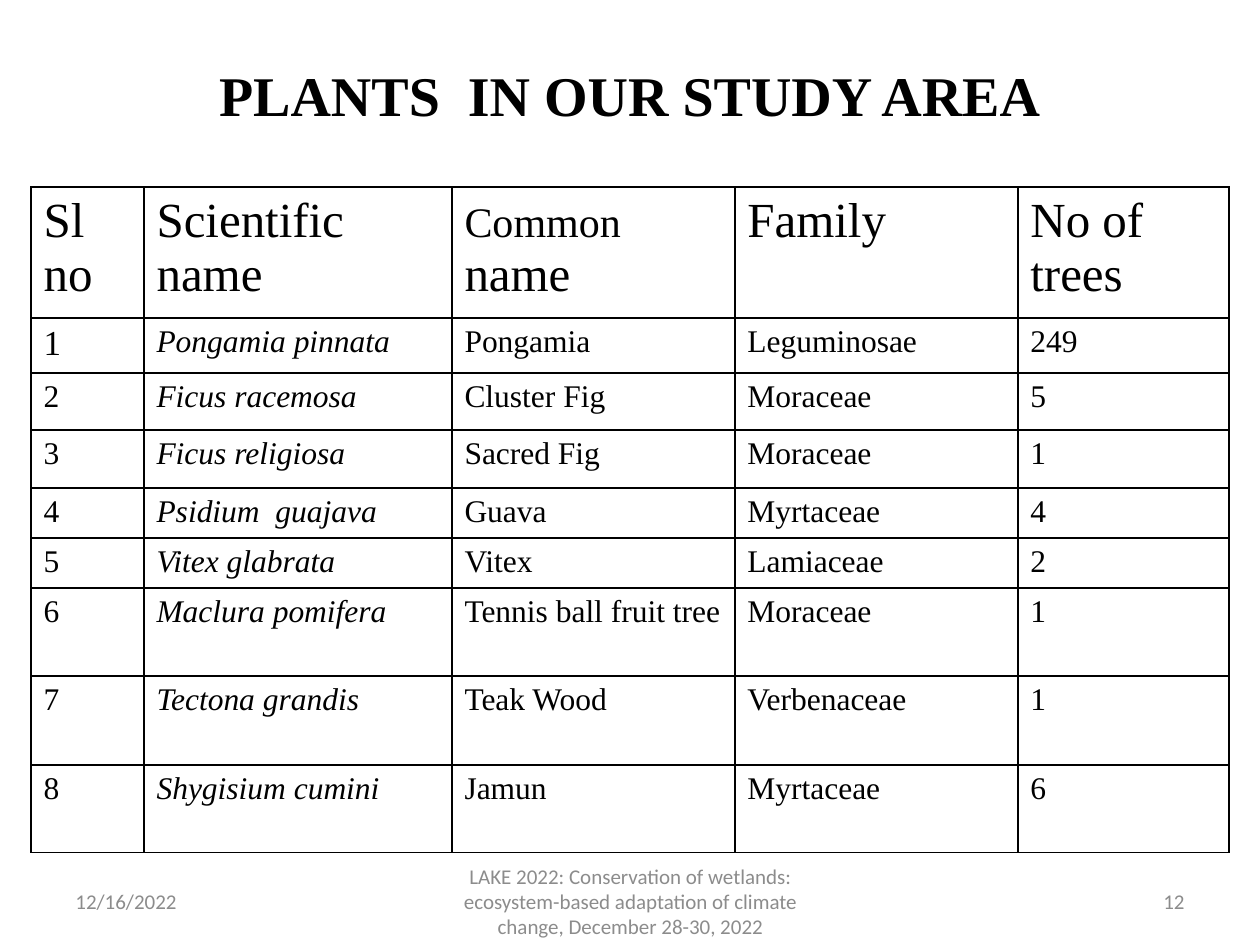
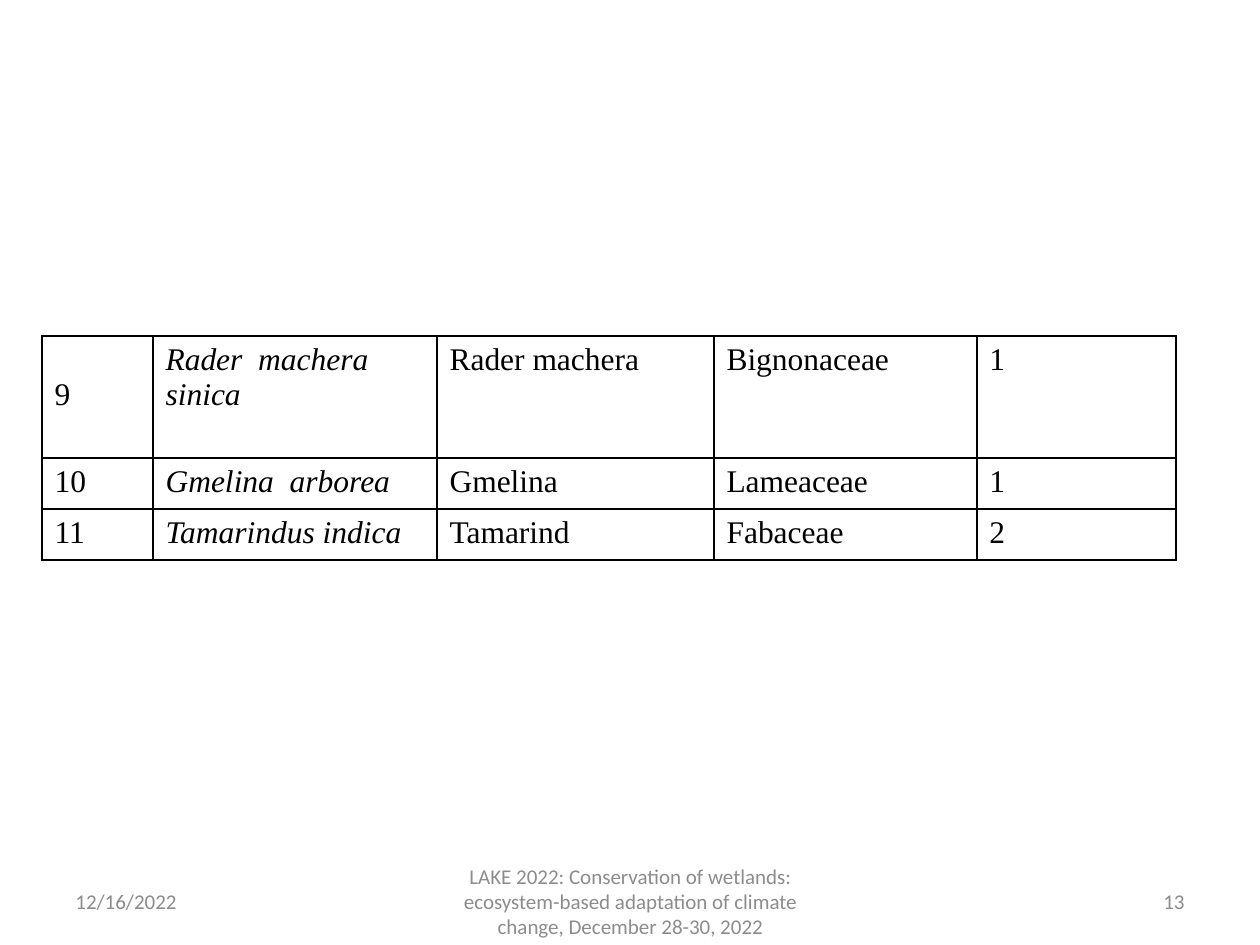
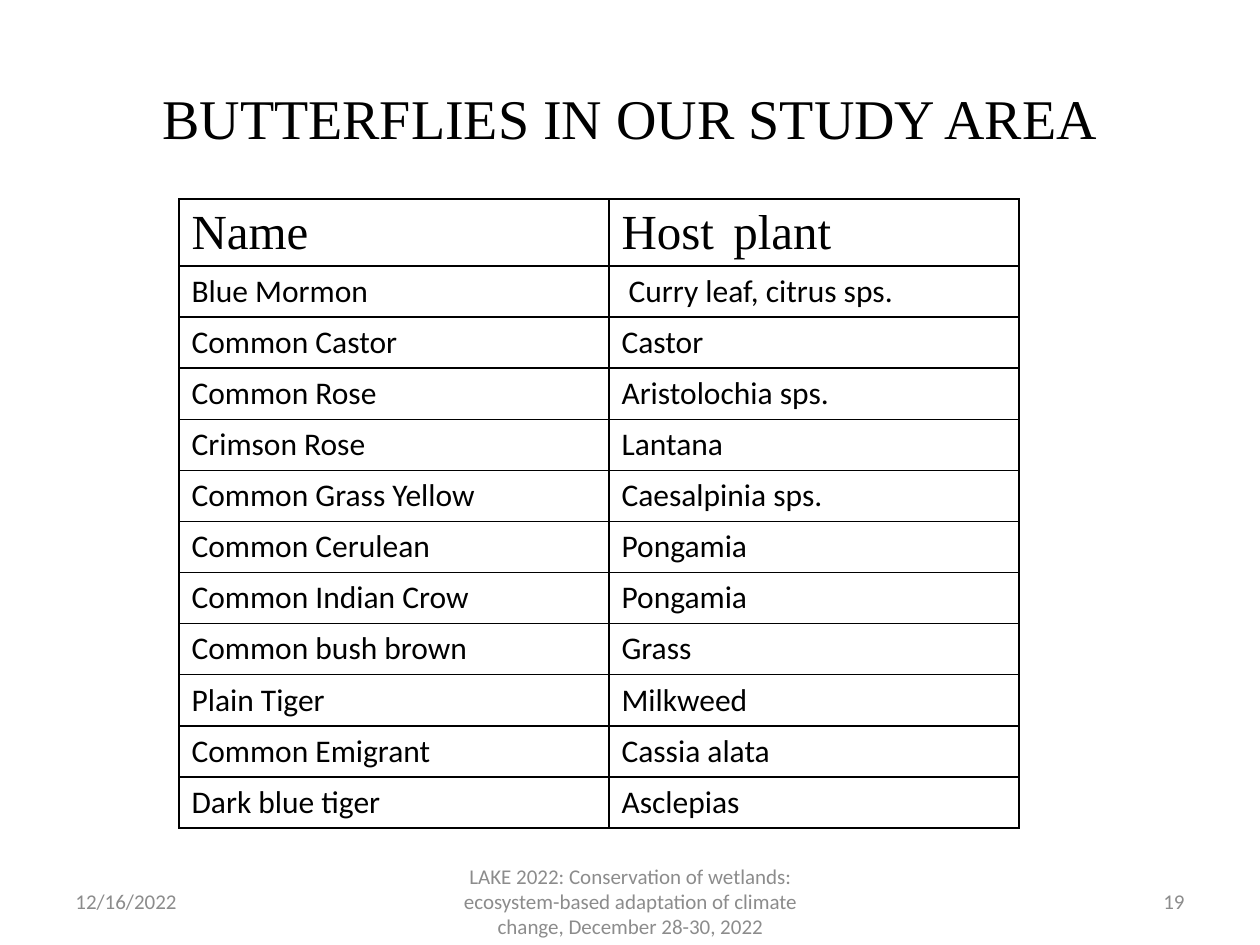
from dataclasses import dataclass

from lxml import etree
from pptx import Presentation
from pptx import util as u
from pptx.dml.color import RGBColor
from pptx.enum import text
from pptx.oxml import ns

PX = 914400 / 126  # EMU in one px
TITLE_ONLY, BLANK = 5, 6


@dataclass(frozen=True)
class Theme:
    ink: str = "000000"
    muted: str = "8C8C8C"
    paper: str = "FFFFFF"
    serif: str = "Times New Roman"
    sans: str = "Calibri"
    title: int = 32
    head: int = 28
    small_head: int = 24
    number: int = 20
    body: int = 18
    footer: int = 12
    border: int = 1


THEME = Theme()
ALIGN = text.PP_ALIGN

# Content
DATE = "12/16/2022"
EVENT = ("LAKE 2022: Conservation of wetlands: ecosystem-based adaptation "
         "of climate change, December 28-30, 2022")

PLANT_HEADS = ["Sl no", "Scientific  name",
               [("Common", {"size": THEME.small_head}), (" name", {})],
               "Family", "No of trees"]
PLANTS = [
    [[("1", {"size": THEME.number})], "Pongamia pinnata", "Pongamia", "Leguminosae", "249"],
    ["2", "Ficus racemosa", "Cluster Fig", "Moraceae", "5"],
    ["3", "Ficus religiosa", "Sacred Fig", "Moraceae", "1"],
    ["4", "Psidium  guajava", "Guava", "Myrtaceae", "4"],
    ["5", "Vitex glabrata", "Vitex", "Lamiaceae", "2"],
    ["6", "Maclura pomifera", "Tennis ball fruit tree", "Moraceae", "1"],
    ["7", "Tectona grandis", "Teak Wood", "Verbenaceae", "1"],
    ["8", "Shygisium cumini", "Jamun", "Myrtaceae", "6"],
]
MORE_PLANTS = [
    ["9", "Rader  machera sinica", "Rader machera", "Bignonaceae", "1"],
    ["10", "Gmelina  arborea", "Gmelina", "Lameaceae", "1"],
    ["11", "Tamarindus indica", "Tamarind", "Fabaceae", "2"],
]
BUTTERFLY_HEADS = ["Name", [("Host ", {}),
                            (" ", {"size": THEME.body, "font": THEME.sans}),
                            ("plant", {})]]
BUTTERFLIES = [
    ["Blue Mormon", " Curry leaf, citrus sps."],
    ["Common Castor", "Castor"],
    ["Common Rose", "Aristolochia sps."],
    ["Crimson Rose", "Lantana"],
    ["Common Grass Yellow", "Caesalpinia sps."],
    ["Common Cerulean", "Pongamia"],
    ["Common Indian Crow", "Pongamia"],
    ["Common bush brown", "Grass"],
    ["Plain Tiger", "Milkweed"],
    ["Common Emigrant", "Cassia alata"],
    ["Dark blue tiger", "Asclepias"],
]


def px(length):
    return u.Emu(round(length * PX))


def write(frame, content, *, size, font=THEME.serif, color=THEME.ink,
          bold=False, italic=False, align=ALIGN.LEFT):
    """Fill a text frame with a string or a list of (text, overrides) spans."""
    para = frame.paragraphs[0]
    para.alignment = align
    spans = [(content, {})] if isinstance(content, str) else content
    for words, changes in spans:
        span = para.add_run()
        span.text = words
        span.font.size = u.Pt(changes.get("size", size))
        span.font.name = changes.get("font", font)
        span.font.color.rgb = RGBColor.from_string(color)
        span.font.bold = bold
        span.font.italic = italic


def add_page(deck, layout):
    page = deck.slides.add_slide(deck.slide_layouts[layout])
    page.background.fill.solid()
    page.background.fill.fore_color.rgb = RGBColor.from_string(THEME.paper)
    return page


def set_title(page, words, top, height, bold=False):
    box = page.shapes.title
    box.left, box.top, box.width, box.height = map(px, (63, top, 1134, height))
    frame = box.text_frame
    frame.auto_size = text.MSO_AUTO_SIZE.NONE
    frame.vertical_anchor = text.MSO_ANCHOR.MIDDLE
    write(frame, words, size=THEME.title, bold=bold, align=ALIGN.CENTER)


def add_footer(page, number):
    parts = [(63, 294, DATE, ALIGN.LEFT), (431, 399, EVENT, ALIGN.CENTER),
             (903, 294, str(number), ALIGN.RIGHT)]
    for left, width, words, align in parts:
        box = page.shapes.add_textbox(px(left), px(876), px(width), px(50))
        frame = box.text_frame
        frame.word_wrap = True
        frame.vertical_anchor = text.MSO_ANCHOR.MIDDLE
        write(frame, words, size=THEME.footer, font=THEME.sans,
              color=THEME.muted, align=align)


def add_borders(cell):
    properties = cell._tc.get_or_add_tcPr()
    for place, side in enumerate(("lnL", "lnR", "lnT", "lnB")):
        line = etree.Element(ns.qn(f"a:{side}"), w=str(u.Pt(THEME.border)))
        fill = etree.SubElement(line, ns.qn("a:solidFill"))
        etree.SubElement(fill, ns.qn("a:srgbClr"), val=THEME.ink)
        properties.insert(place, line)


def add_grid(page, left, top, widths, heights, rows, heads=None,
             font=THEME.serif, italic_column=None):
    lines = ([heads] if heads else []) + rows
    table = page.shapes.add_table(len(lines), len(widths), px(left), px(top),
                                  px(sum(widths)), px(sum(heights))).table
    table.first_row = table.horz_banding = False
    for column, width in zip(table.columns, widths):
        column.width = px(width)
    for r, (line, height) in enumerate(zip(lines, heights)):
        table.rows[r].height = px(height)
        is_head = bool(heads) and r == 0
        for c, content in enumerate(line):
            cell = table.cell(r, c)
            cell.fill.background()
            add_borders(cell)
            write(cell.text_frame, content,
                  size=THEME.head if is_head else THEME.body,
                  font=THEME.serif if is_head else font,
                  italic=not is_head and c == italic_column)
    return table


def main():
    deck = Presentation()
    deck.slide_width, deck.slide_height = px(1260), px(945)

    # Plants 1 to 8
    page = add_page(deck, TITLE_ONLY)
    set_title(page, "PLANTS  IN OUR STUDY AREA", 28, 132, bold=True)
    add_grid(page, 31, 187, [113, 308, 283, 283, 211],
             [131, 55, 57, 58, 50, 50, 88, 89, 88],
             PLANTS, PLANT_HEADS, italic_column=1)
    add_footer(page, 12)

    # Plants 9 to 11
    page = add_page(deck, BLANK)
    table = add_grid(page, 42, 336, [111, 284, 277, 263, 199], [122, 51, 51],
                     MORE_PLANTS, italic_column=1)
    table.cell(0, 0).margin_top = px(41)  # number sits one line lower
    add_footer(page, 13)

    # Butterflies and their host plants
    page = add_page(deck, TITLE_ONLY)
    set_title(page, "BUTTERFLIES IN OUR STUDY AREA", 38, 158)
    add_grid(page, 179, 199, [430, 410], [67] + [51] * len(BUTTERFLIES),
             BUTTERFLIES, BUTTERFLY_HEADS, font=THEME.sans)
    add_footer(page, 19)

    deck.save("out.pptx")


if __name__ == "__main__":
    main()
